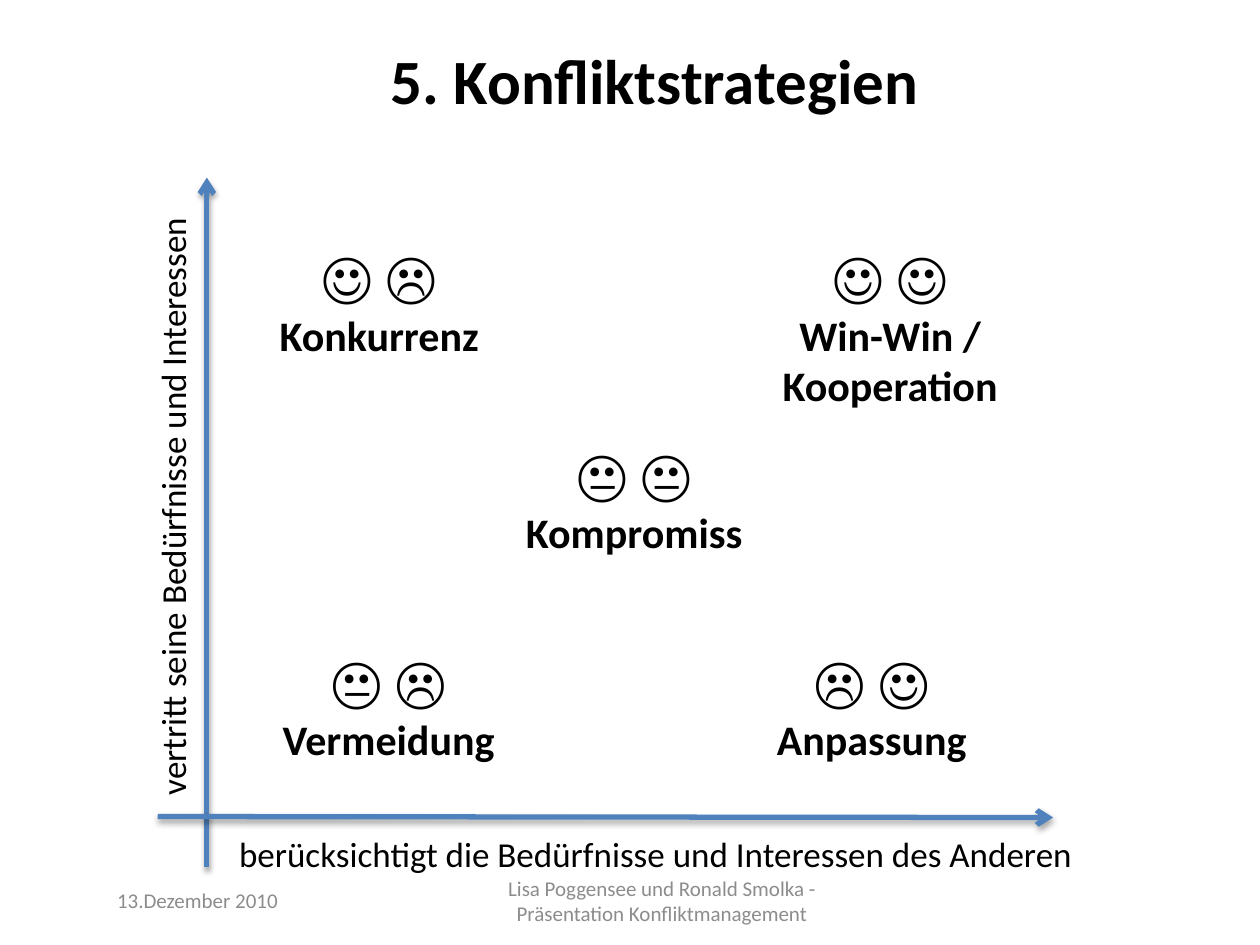
from lxml import etree
from pptx import Presentation
from pptx.dml.color import RGBColor
from pptx.enum.shapes import MSO_CONNECTOR
from pptx.enum.text import MSO_ANCHOR, PP_ALIGN
from pptx.oxml import parse_xml
from pptx.util import Cm, Pt

STRAIGHT = MSO_CONNECTOR.STRAIGHT
LEFT, CENTER = PP_ALIGN.LEFT, PP_ALIGN.CENTER
TOP, MIDDLE = MSO_ANCHOR.TOP, MSO_ANCHOR.MIDDLE
FONT, BLACK, GREY, BLUE = "Calibri", "000000", "8C8C8C", "4F81BD"
DRAWING = "http://schemas.openxmlformats.org/drawingml/2006/main"
SHADOW = (
    f'<a:effectLst xmlns:a="{DRAWING}">'
    '<a:outerShdw blurRad="40000" dist="23000" dir="5400000" rotWithShape="0">'
    '<a:srgbClr val="000000"><a:alpha val="35000"/></a:srgbClr>'
    '</a:outerShdw></a:effectLst>'
)

TITLE = "5. Konfliktstrategien"
AXES = [(4.17, 17.48, 4.17, 3.58), (3.18, 16.46, 21.23, 16.48)]
AXIS_LABELS = [
    ("berücksichtigt die Bedürfnisse und Interessen des Anderen", (4.57, 16.66, 17.65, 1.12), 0),
    ("vertritt seine Bedürfnisse und Interessen", (-2.77, 9.47, 12.5, 1.12), 270),
]
UPPER, MIDDLE_ROW, LOWER = 4.75, 8.74, 12.9
STRATEGIES = [
    ("☺ ☹", ["Konkurrenz"], 5.36, UPPER, 4.57),
    ("☺ ☺", ["Win-Win /", "Kooperation"], 15.47, UPPER, 4.95),
    ("😐 😐", ["Kompromiss"], 10.31, MIDDLE_ROW, 4.95),
    ("😐 ☹", ["Vermeidung"], 5.36, LOWER, 4.95),
    ("☹ ☺", ["Anpassung"], 15.29, LOWER, 4.57),
]
FOOTERS = [
    ("13.Dezember 2010", (2.11, 17.65, 5.92, 1.01), LEFT),
    ("Lisa Poggensee und Ronald Smolka - Präsentation Konfliktmanagement",
     (9.32, 17.65, 8.05, 1.01), CENTER),
]


def rgb(value):
    """Return the colour for a hex string."""
    return RGBColor.from_string(value)


def write(frame, lines, sizes, color=BLACK, bold=False, align=LEFT, anchor=TOP):
    """Fill a text frame with one paragraph per line and format it."""
    frame.text = "\n".join(lines)
    frame.word_wrap = True
    frame.vertical_anchor = anchor
    for paragraph, size in zip(frame.paragraphs, sizes):
        paragraph.alignment = align
        for run in paragraph.runs:
            run.font.name = FONT
            run.font.size = Pt(size)
            run.font.bold = bold
            run.font.color.rgb = rgb(color)


def place(shape, box):
    """Set position and size of a shape in centimetres."""
    shape.left, shape.top, shape.width, shape.height = map(Cm, box)


def add_text(slide, box, lines, sizes, **style):
    """Add a formatted text box and return it."""
    label = slide.shapes.add_textbox(*map(Cm, box))
    write(label.text_frame, lines, sizes, **style)
    return label


def add_axis(slide, ends):
    """Add a shadowed axis arrow."""
    axis = slide.shapes.add_connector(STRAIGHT, *map(Cm, ends))
    axis.line.color.rgb = rgb(BLUE)
    axis.line.width = Pt(3)
    etree.SubElement(axis.line._get_or_add_ln(), f"{{{DRAWING}}}tailEnd", type="arrow")
    axis._element.spPr.append(parse_xml(SHADOW))


def main():
    """Build the slide and save it."""
    deck = Presentation()
    deck.slide_width, deck.slide_height = Cm(25.4), Cm(19.05)
    slide = deck.slides.add_slide(deck.slide_layouts[5])
    place(slide.shapes.title, (1.98, 0, 22.43, 3.18))
    write(slide.shapes.title.text_frame, [TITLE], [36], bold=True, align=CENTER, anchor=MIDDLE)
    for ends in AXES:
        add_axis(slide, ends)
    for text, box, angle in AXIS_LABELS:
        add_text(slide, box, [text], [20]).rotation = angle
    for faces, names, left, top, width in STRATEGIES:
        height = 1.6 + 1.04 * len(names)
        add_text(slide, (left, top, width, height), [faces, *names],
                 [32] + [24] * len(names), bold=True, align=CENTER)
    for text, box, align in FOOTERS:
        add_text(slide, box, [text], [12], color=GREY, align=align, anchor=MIDDLE)
    deck.save("out.pptx")


if __name__ == "__main__":
    main()
